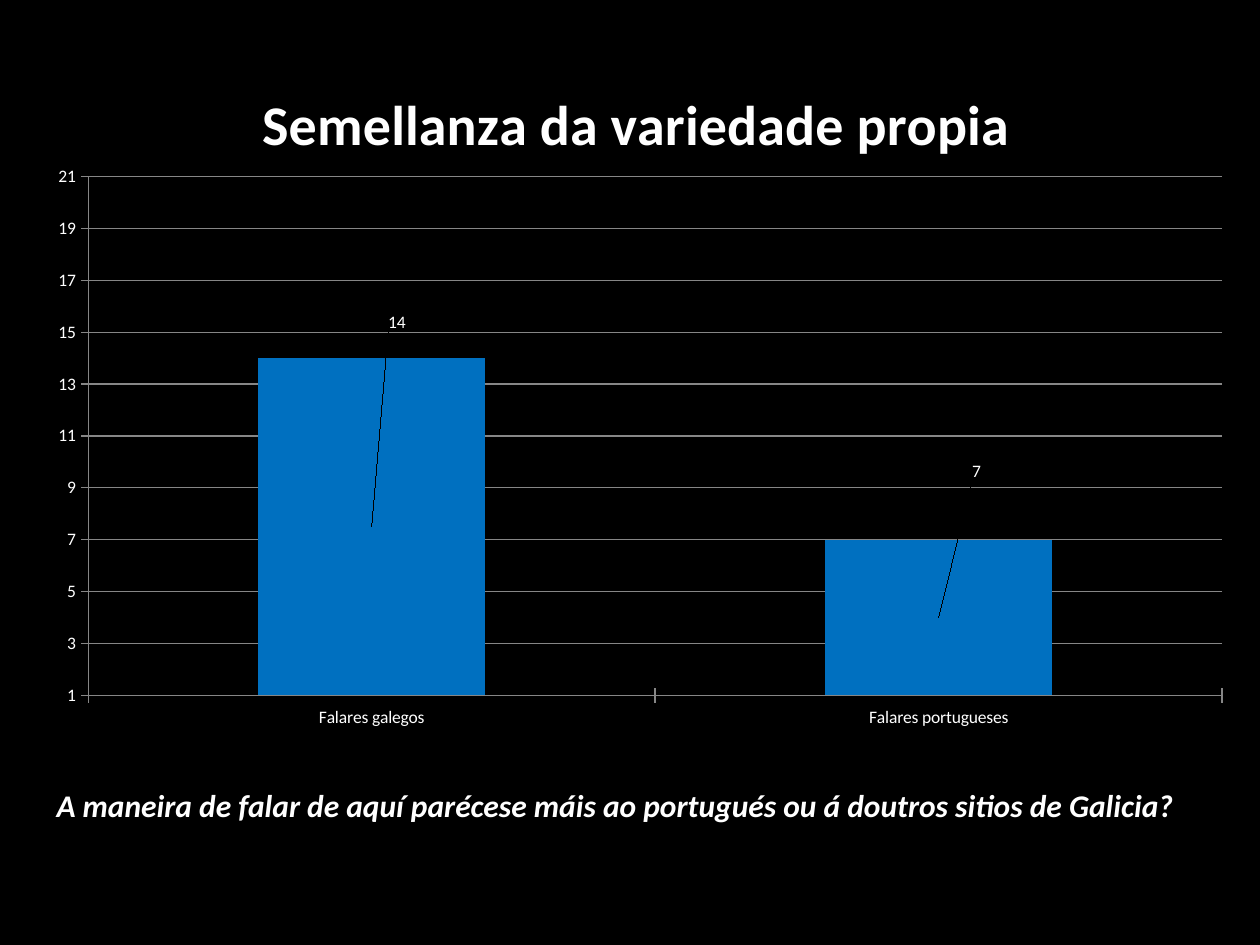
from dataclasses import dataclass

from lxml import etree
from pptx import Presentation
from pptx import util as u
from pptx.chart import data as chart_data
from pptx.dml import color
from pptx.enum import chart as chart_enum
from pptx.enum import text
from pptx.oxml import ns


@dataclass(frozen=True)
class Theme:
    font: str = "Calibri"
    background: color.RGBColor = color.RGBColor(0x00, 0x00, 0x00)
    ink: color.RGBColor = color.RGBColor(0xFF, 0xFF, 0xFF)
    bar: color.RGBColor = color.RGBColor(0x00, 0x70, 0xC0)
    grid: color.RGBColor = color.RGBColor(0x86, 0x86, 0x86)
    title_size: u.Pt = u.Pt(32)
    question_size: u.Pt = u.Pt(18)
    chart_size: u.Pt = u.Pt(10)


@dataclass(frozen=True)
class Box:
    left: u.Cm
    top: u.Cm
    width: u.Cm
    height: u.Cm


THEME = Theme()
TITLE = "Semellanza da variedade propia"
QUESTION = (
    "A maneira de falar de aquí parécese máis ao portugués "
    "ou á doutros sitios de Galicia?"
)
ANSWERS = {"Falares galegos": 14, "Falares portugueses": 7}
LABEL_OFFSETS = [(0.02, -0.28), (0.03, -0.2)]
TITLE_POSITION = {"xMode": "edge", "yMode": "edge", "x": 0.2, "y": 0.04}
PLOT_POSITION = {
    "layoutTarget": "inner", "xMode": "edge", "yMode": "edge",
    "x": 0.07, "y": 0.18, "w": 0.9, "h": 0.71,
}


def style_font(font, size, bold=False, italic=False):
    font.name = THEME.font
    font.size = size
    font.bold = bold
    font.italic = italic
    font.color.rgb = THEME.ink


def set_layout(parent, predecessor, settings):
    for previous in parent.findall(ns.qn("c:layout")):
        parent.remove(previous)
    layout = etree.Element(ns.qn("c:layout"))
    manual = etree.SubElement(layout, ns.qn("c:manualLayout"))
    for name, value in settings.items():
        etree.SubElement(manual, ns.qn(f"c:{name}")).set("val", str(value))
    if predecessor is None:
        parent.insert(0, layout)
    else:
        parent.find(ns.qn(predecessor)).addnext(layout)


def style_title(chart):
    paragraph = chart.chart_title.text_frame.paragraphs[0]
    run = paragraph.add_run()
    run.text = TITLE
    style_font(run.font, THEME.title_size, bold=True)
    chart.chart_title.include_in_layout = False
    set_layout(chart.chart_title._element, "c:tx", TITLE_POSITION)


def style_axes(chart):
    for axis in (chart.category_axis, chart.value_axis):
        axis.major_tick_mark = chart_enum.XL_TICK_MARK.CROSS
        axis.format.line.color.rgb = THEME.grid
        style_font(axis.tick_labels.font, THEME.chart_size)
    axis = chart.value_axis
    axis.minimum_scale = 1
    axis.maximum_scale = 21
    axis.major_unit = 2
    axis.has_major_gridlines = True
    axis.major_gridlines.format.line.color.rgb = THEME.grid


def style_bars(plot):
    plot.gap_width = 150
    plot.overlap = 100
    plot.vary_by_categories = False
    series = plot.series[0]
    series.invert_if_negative = False
    series.format.fill.solid()
    series.format.fill.fore_color.rgb = THEME.bar
    series.data_labels.show_value = True
    style_font(series.data_labels.font, THEME.chart_size)
    for index, (x, y) in enumerate(LABEL_OFFSETS):
        style_font(series.points[index].data_label.font, THEME.chart_size)
        label = series._element.findall(f".//{ns.qn('c:dLbl')}")[index]
        set_layout(label, "c:idx", {"x": x, "y": y})


def add_answer_chart(slide, box):
    answers = chart_data.CategoryChartData()
    answers.categories = list(ANSWERS)
    answers.add_series(TITLE, list(ANSWERS.values()))
    chart = slide.shapes.add_chart(
        chart_enum.XL_CHART_TYPE.COLUMN_STACKED,
        box.left, box.top, box.width, box.height, answers,
    ).chart
    chart.has_legend = False
    style_font(chart.font, THEME.chart_size)
    style_title(chart)
    style_axes(chart)
    style_bars(chart.plots[0])
    plot_area = chart._chartSpace.find(f".//{ns.qn('c:plotArea')}")
    set_layout(plot_area, None, PLOT_POSITION)


def add_question(slide, box):
    shape = slide.shapes.add_textbox(box.left, box.top, box.width, box.height)
    frame = shape.text_frame
    frame.word_wrap = True
    frame.auto_size = text.MSO_AUTO_SIZE.SHAPE_TO_FIT_TEXT
    run = frame.paragraphs[0].add_run()
    run.text = QUESTION
    style_font(run.font, THEME.question_size, bold=True, italic=True)


def main():
    presentation = Presentation()
    presentation.slide_width = u.Cm(25.4)
    presentation.slide_height = u.Cm(19.05)
    slide = presentation.slides.add_slide(presentation.slide_layouts[6])
    slide.background.fill.solid()
    slide.background.fill.fore_color.rgb = THEME.background
    add_answer_chart(
        slide, Box(u.Cm(0), u.Cm(0.91), presentation.slide_width, u.Cm(14.73))
    )
    add_question(slide, Box(u.Cm(0.89), u.Cm(15.72), u.Cm(23.6), u.Cm(2.57)))
    presentation.save("out.pptx")


if __name__ == "__main__":
    main()
